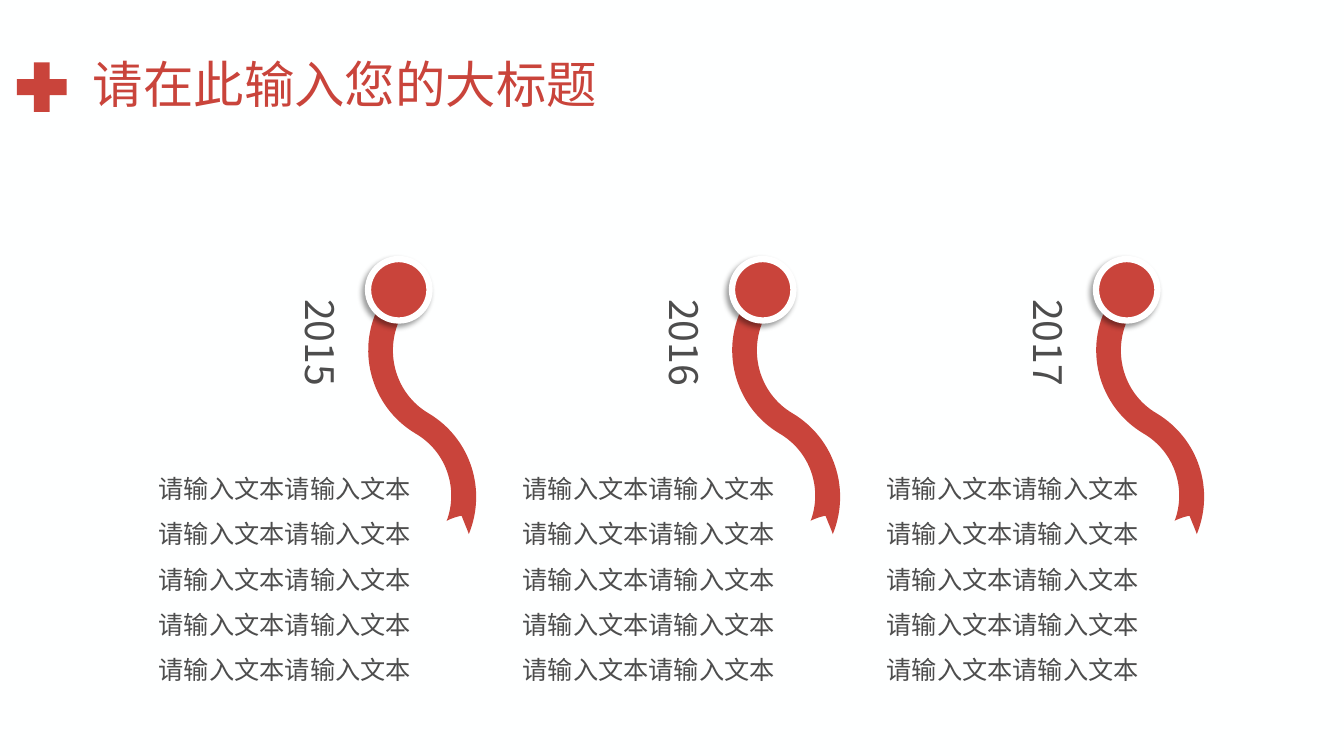
import dataclasses

import pptx
import pptx.dml.color
import pptx.enum.shapes
import pptx.enum.text
import pptx.oxml
import pptx.oxml.ns
import pptx.util
from lxml import etree
from pptx.util import Inches

SHAPE = pptx.enum.shapes.MSO_SHAPE
ALIGN = pptx.enum.text.PP_ALIGN
ANCHOR = pptx.enum.text.MSO_ANCHOR
qn = pptx.oxml.ns.qn


@dataclasses.dataclass(frozen=True)
class Theme:
    red: str = "C9443B"
    gray: str = "4D4D4D"
    white: str = "FFFFFF"
    backdrop: str = "FEFFFF"
    font: str = "Noto Sans CJK SC"
    title_size: int = 36
    year_size: int = 28
    body_size: int = 18


THEME = Theme()
YEARS = ("2015", "2016", "2017")
BODY = "请输入文本" * 10
SLIDE_SIZE = (13.33, 7.5)
FIRST_LEFT, COLUMN_PITCH = 1.39, 3.61

# Ribbon box and outline, x relative to the column: one point is a corner,
# three points are a Bézier curve (two controls and an end)
RIBBON_BOX = (2.26, 2.87, 1.07, 2.43)
RIBBON_START = (2.47, 2.87)
RIBBON = (
    ((2.39, 3.0),),
    ((2.13, 3.45), (2.28, 4.03), (2.73, 4.3)),
    ((3.04, 4.48), (3.16, 4.85), (3.04, 5.17)),
    ((3.04, 5.16), (3.18, 5.11), (3.19, 5.12)),
    ((3.2, 5.15), (3.26, 5.29), (3.26, 5.3)),
    ((3.44, 4.86), (3.28, 4.35), (2.86, 4.1)),
    ((2.52, 3.9), (2.41, 3.46), (2.6, 3.12)),
    ((2.64, 3.07),),
)


def rgb(color):
    return pptx.dml.color.RGBColor.from_string(color)


def place(shape, left, top, width, height):
    shape.left, shape.top = Inches(left), Inches(top)
    shape.width, shape.height = Inches(width), Inches(height)


def paint(shape, color):
    shape.shadow.inherit = False
    shape.fill.solid()
    shape.fill.fore_color.rgb = rgb(color)
    shape.line.fill.background()


def add_preset(slide, preset, box, color):
    shape = slide.shapes.add_shape(preset, *map(Inches, box))
    paint(shape, color)
    return shape


def write(frame, text, size, color, align, spacing=None):
    frame.word_wrap = True
    frame.text = text
    paragraph = frame.paragraphs[0]
    paragraph.alignment = align
    paragraph.line_spacing = spacing
    font = paragraph.runs[0].font
    font.size = pptx.util.Pt(size)
    font.color.rgb = rgb(color)
    font.name = THEME.font
    # East Asian text takes its typeface from a:ea
    etree.SubElement(font._element, qn("a:ea"), typeface=THEME.font)


def add_heading(slide):
    add_preset(slide, SHAPE.MATH_PLUS, (0.08, 0.53, 0.67, 0.67), THEME.red)
    title = slide.shapes.title
    # Bring the title in front of the backdrop
    slide.shapes._spTree.append(title._element)
    place(title, 0.82, 0.4, 11.68, 0.93)
    title.text_frame.vertical_anchor = ANCHOR.MIDDLE
    write(title.text_frame, "请在此输入您的大标题", THEME.title_size,
          THEME.red, ALIGN.LEFT, 0.9)


def add_ribbon(slide, left):
    box_left, box_top, width, height = RIBBON_BOX
    ends = [(Inches(x), Inches(y)) for x, y in (part[-1] for part in RIBBON)]
    builder = slide.shapes.build_freeform(*map(Inches, RIBBON_START))
    builder.add_line_segments(ends, close=True)
    ribbon = builder.convert_to_shape()
    paint(ribbon, THEME.red)
    place(ribbon, left + box_left, box_top, width, height)

    # Redraw the segments as true curves inside the ribbon box
    outline = next(ribbon._element.iter(qn("a:path")))
    outline.set("w", str(Inches(width)))
    outline.set("h", str(Inches(height)))
    for segment in list(outline):
        outline.remove(segment)
    for index, points in enumerate(((RIBBON_START,), *RIBBON)):
        corner = "a:lnTo" if index else "a:moveTo"
        segment = etree.SubElement(
            outline, qn("a:cubicBezTo" if len(points) == 3 else corner))
        for x, y in points:
            etree.SubElement(segment, qn("a:pt"), x=str(Inches(x - box_left)),
                             y=str(Inches(y - box_top)))
    etree.SubElement(outline, qn("a:close"))


def add_year(slide, left, year):
    box = slide.shapes.add_textbox(
        Inches(left + 1.41), Inches(2.87), Inches(0.67), Inches(1.37))
    write(box.text_frame, year, THEME.year_size, THEME.gray, ALIGN.JUSTIFY)
    box.text_frame._txBody.bodyPr.set("vert", "eaVert")
    box.text_frame.auto_size = pptx.enum.text.MSO_AUTO_SIZE.SHAPE_TO_FIT_TEXT


def add_knob(slide, left):
    knob = add_preset(slide, SHAPE.OVAL, (left + 2.26, 2.57, 0.61, 0.61),
                      THEME.red)
    knob.line.color.rgb = rgb(THEME.white)
    knob.line.width = pptx.util.Pt(4.5)
    # Soft shadow towards the lower left
    effects = knob._element.spPr.find(qn("a:effectLst"))
    effects.append(pptx.oxml.parse_xml(
        f'<a:outerShdw {pptx.oxml.ns.nsdecls("a")} blurRad="{pptx.util.Pt(4)}" '
        f'dist="{pptx.util.Pt(3)}" dir="{135 * 60000}" algn="tr" rotWithShape="0">'
        '<a:srgbClr val="000000"><a:alpha val="40000"/></a:srgbClr>'
        '</a:outerShdw>'))


def add_body(slide, left):
    box = slide.shapes.add_textbox(
        Inches(left), Inches(4.49), Inches(2.87), Inches(2.36))
    box.text_frame.vertical_anchor = ANCHOR.MIDDLE
    write(box.text_frame, BODY, THEME.body_size, THEME.gray, ALIGN.CENTER, 1.5)


def main():
    deck = pptx.Presentation()
    deck.slide_width, deck.slide_height = map(Inches, SLIDE_SIZE)
    slide = deck.slides.add_slide(deck.slide_layouts.get_by_name("Title Only"))

    # Backdrop and heading
    add_preset(slide, SHAPE.RECTANGLE, (0, 0, *SLIDE_SIZE), THEME.backdrop)
    add_heading(slide)

    # One column per year
    for index, year in enumerate(YEARS):
        left = FIRST_LEFT + index * COLUMN_PITCH
        add_ribbon(slide, left)
        add_year(slide, left, year)
        add_knob(slide, left)
        add_body(slide, left)

    deck.save("out.pptx")


if __name__ == "__main__":
    main()
